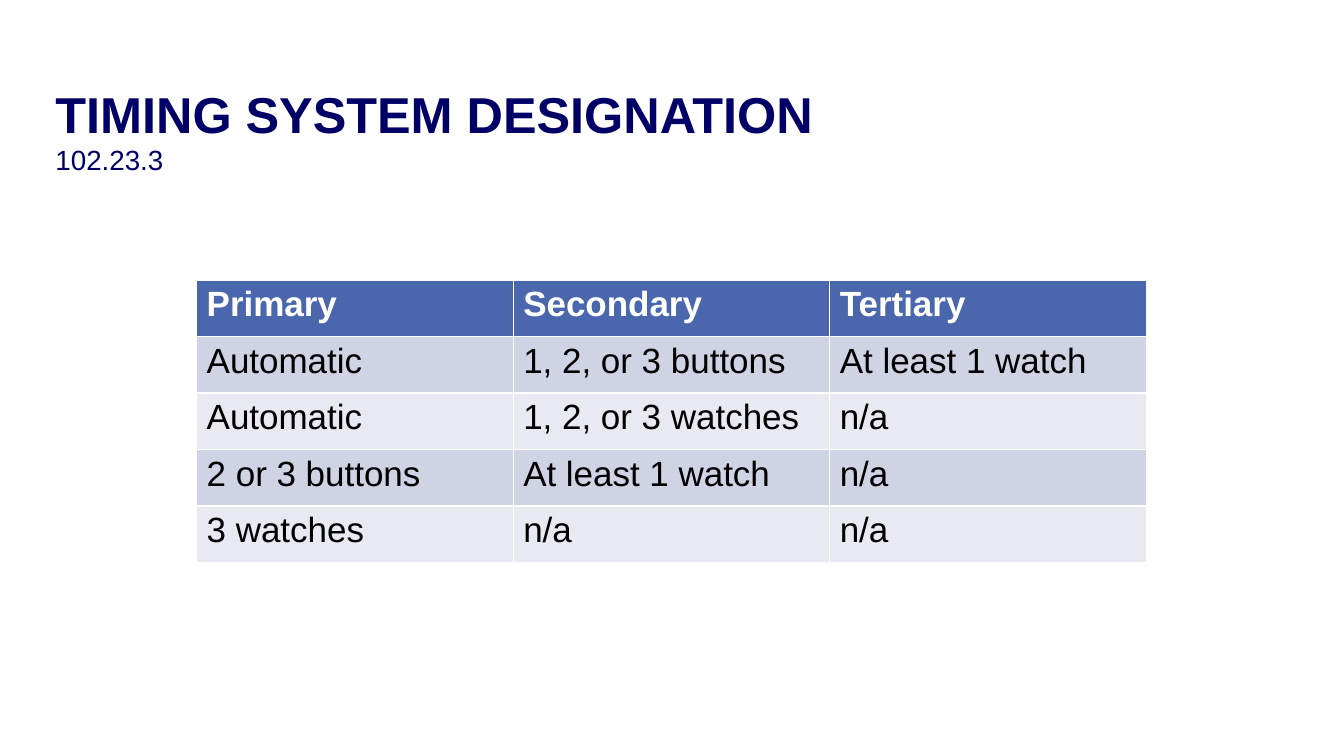
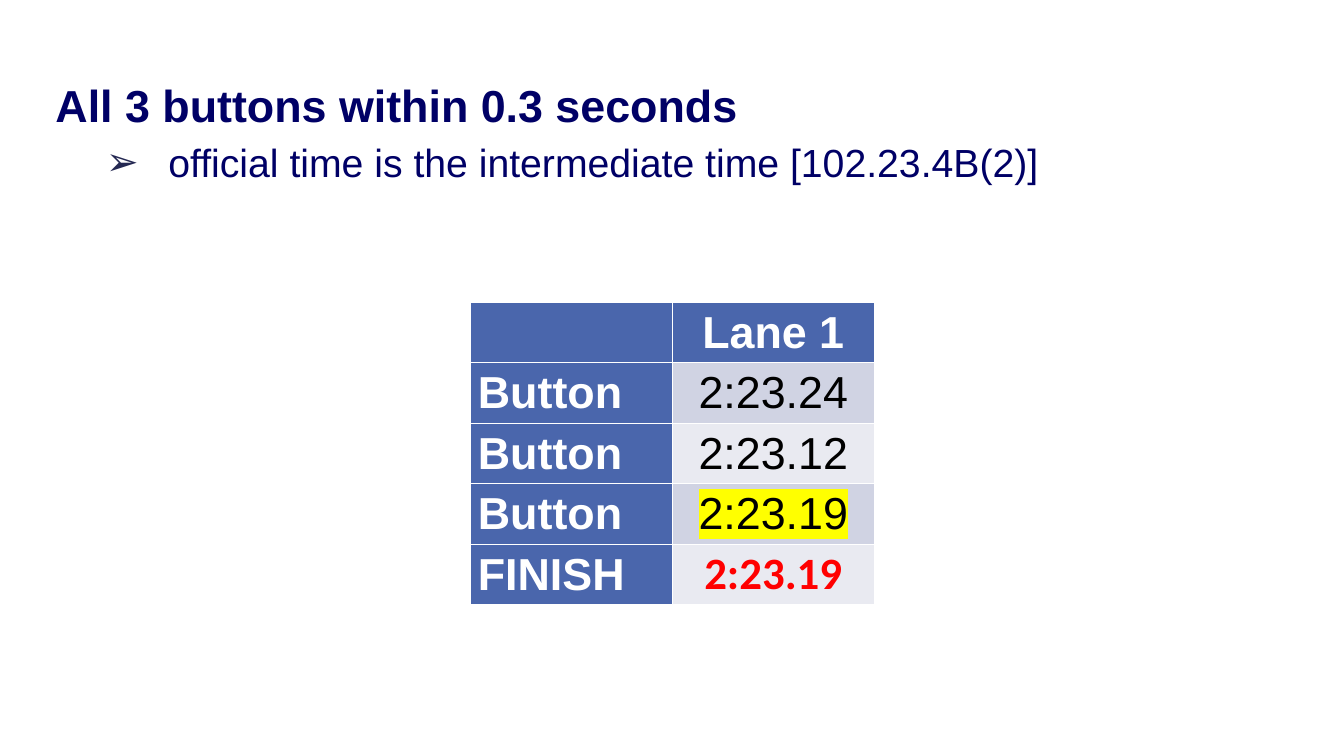
from lxml.etree import SubElement
from pptx import Presentation
from pptx.dml.color import RGBColor
from pptx.enum.text import MSO_ANCHOR, MSO_AUTO_SIZE, PP_ALIGN
from pptx.oxml.ns import qn
from pptx.util import Inches, Pt

NAVY, BLUE, INK = "000066", "4A66AC", "242852"
WHITE, BLACK, RED, YELLOW = "FFFFFF", "000000", "FF0000", "FFFF00"
BANDS = ("D0D3E3", "E9EAF1")


def rgb(code):
    return RGBColor.from_string(code)


def write(para, text, size, color=NAVY, bold=False, face="Arial", mark=None):
    """Add a run to a paragraph; mark is its highlight colour."""
    run = para.add_run()
    run.text = text
    font = run.font
    font.name, font.size, font.bold = face, Pt(size), bold
    font.color.rgb = rgb(color)
    if mark:
        props = run._r.get_or_add_rPr()
        light = SubElement(props, qn("a:highlight"))
        SubElement(light, qn("a:srgbClr"), val=mark)
        props.find(qn("a:latin")).addprevious(light)


def place(holder, top, height, head):
    """Move a placeholder and return its text frame, with head as top inset."""
    holder.left, holder.top = Inches(0.45), Inches(top)
    holder.width, holder.height = Inches(12.42), Inches(height)
    frame = holder.text_frame
    frame.auto_size, frame.word_wrap = MSO_AUTO_SIZE.NONE, True
    frame.vertical_anchor = MSO_ANCHOR.TOP
    frame.margin_left = frame.margin_right = frame.margin_bottom = Inches(0.1)
    frame.margin_top = Inches(head)
    return frame


def space(para, lines):
    para.alignment = PP_ALIGN.LEFT
    para.line_spacing = lines
    para.space_before = para.space_after = Pt(0)


def bullet(para, sign, color, left, hang):
    props = para._p.get_or_add_pPr()
    props.set("marL", str(Inches(left)))
    props.set("indent", str(-Inches(hang)))
    SubElement(SubElement(props, qn("a:buClr")), qn("a:srgbClr"), val=color)
    SubElement(props, qn("a:buFont"), typeface="Arial")
    SubElement(props, qn("a:buChar"), char=sign)


def grid(slide, rows, left, top, wide, high, size, side=False, tight=False, looks=None):
    """Add a banded table; side makes column one a header, looks maps (row, column) to formats."""
    count = len(rows[0])
    table = slide.shapes.add_table(
        len(rows), count, Inches(left), Inches(top),
        Inches(wide * count), Inches(high * len(rows))).table
    table.first_col = side
    for r, row in enumerate(rows):
        table.rows[r].height = Inches(high)
        for c, text in enumerate(row):
            cell = table.cell(r, c)
            head = r == 0 or (side and c == 0)
            cell.fill.solid()
            cell.fill.fore_color.rgb = rgb(BLUE if head else BANDS[(r - 1) % 2])
            para = cell.text_frame.paragraphs[0]
            if tight:
                cell.vertical_anchor = MSO_ANCHOR.MIDDLE
                cell.margin_left = cell.margin_right = Inches(0.07)
                cell.margin_top = cell.margin_bottom = 0
                para.alignment = PP_ALIGN.CENTER if c else PP_ALIGN.LEFT
            if text:
                look = {"color": WHITE if head else BLACK, "bold": head}
                look.update((looks or {}).get((r, c), {}))
                write(para, text, size, **look)


def systems(deck):
    slide = deck.slides.add_slide(deck.slide_layouts[5])
    para = place(slide.shapes.title, 0.66, 0.83, 0.16).paragraphs[0]
    space(para, 1.0)
    write(para, "TIMING SYSTEM DESIGNATION", 36, bold=True)
    para.add_line_break()
    write(para, "102.23.3", 19.8)
    rows = [
        ("Primary", "Secondary", "Tertiary"),
        ("Automatic", "1, 2, or 3 buttons", "At least 1 watch"),
        ("Automatic", "1, 2, or 3 watches", "n/a"),
        ("2 or 3 buttons", "At least 1 watch", "n/a"),
        ("3 watches", "n/a", "n/a"),
    ]
    grid(slide, rows, 1.95, 2.78, 3.14, 0.56, 25)


def buttons(deck):
    slide = deck.slides.add_slide(deck.slide_layouts[1])
    title = slide.shapes.title.element
    title.getparent().remove(title)
    frame = place(slide.placeholders[1], 0.59, 2.3, 0.1)
    lead = frame.paragraphs[0]
    space(lead, 1.15)
    bullet_free = lead._p.get_or_add_pPr()
    bullet_free.set("marL", "0")
    bullet_free.set("indent", "0")
    SubElement(bullet_free, qn("a:buNone"))
    write(lead, "All 3 buttons within 0.3 seconds", 32, bold=True)
    rule = frame.add_paragraph()
    rule.level = 1
    space(rule, 1.15)
    bullet(rule, "➢", INK, 1.12, 0.62)
    write(rule, "official time is the intermediate time [102.23.4B(2)]", 28)
    rows = [
        ("", "Lane 1"),
        ("Button", "2:23.24"),
        ("Button", "2:23.12"),
        ("Button", "2:23.19"),
        ("FINISH", "2:23.19"),
    ]
    looks = {
        (3, 1): {"mark": YELLOW},
        (4, 1): {"color": RED, "bold": True, "face": "Calibri"},
    }
    grid(slide, rows, 4.67, 3, 2, 0.6, 32, side=True, tight=True, looks=looks)


def main():
    deck = Presentation()
    deck.slide_width, deck.slide_height = Inches(13.33), Inches(7.5)
    systems(deck)
    buttons(deck)
    deck.save("out.pptx")


if __name__ == "__main__":
    main()
